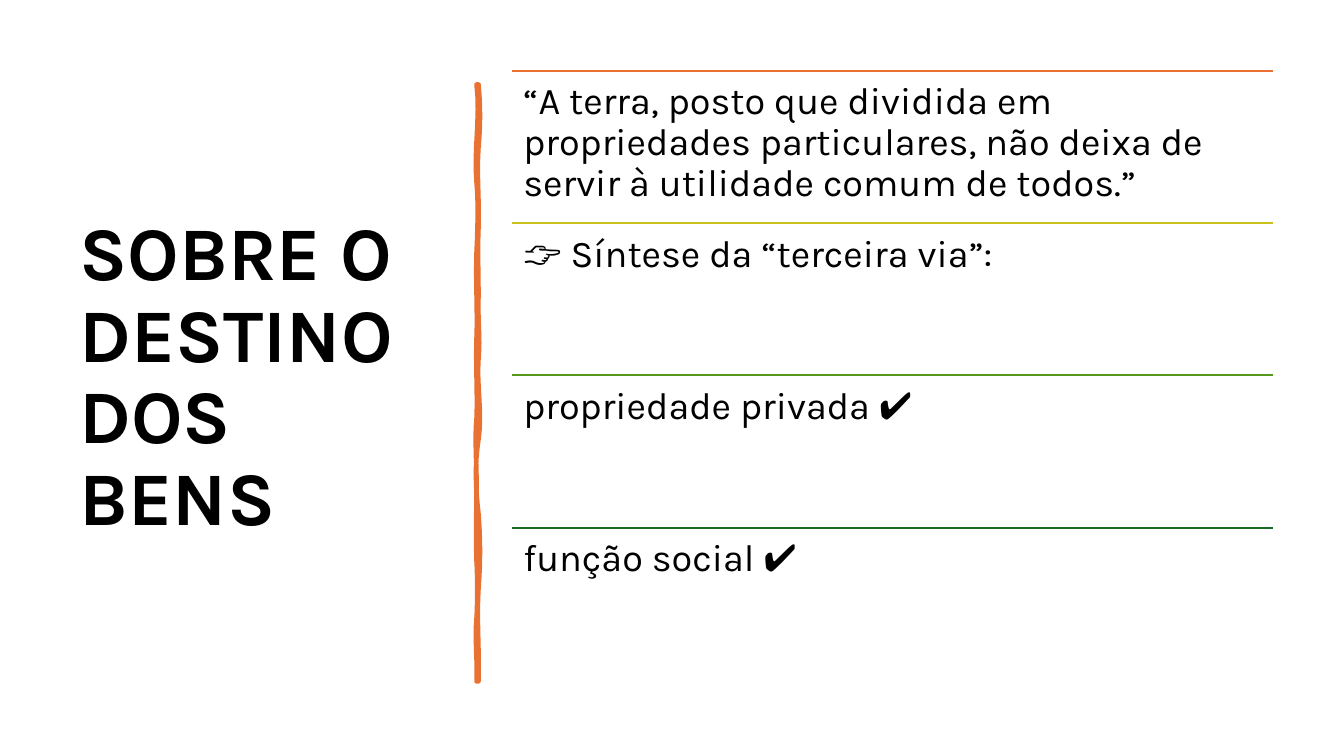
from lxml import etree
from pptx import Presentation
from pptx import util as u
from pptx.dml.color import RGBColor
from pptx.enum import shapes, text
from pptx.oxml.ns import qn

TITLE = dict(name="Karla", size=u.Pt(54), bold=True)
BODY = dict(name="Karla", size=u.Pt(27), bold=False)
LEFT, TOP, WIDE, STEP = 12.9, 1.78, 19.18, 3.84
ROWS = [
    ("E97132", "“A terra, posto que dividida em propriedades particulares, "
               "não deixa de servir à utilidade comum de todos.”"),
    ("CBC11E", "👉 Síntese da “terceira via”:"),
    ("56991D", "propriedade privada ✔️"),
    ("196B24", "função social ✔️"),
]
RIGHT_YS = [2.13, 3.71, 5.74, 7.47, 9.04, 11.07, 12.95, 14.83, 17.17]
RIGHT_BENDS = [(2, 2), (-2, 1), (-1, 0), (-1, 2), (-2, 4), (-4, -3), (2, 2), (-2, 1)]
LEFT_YS = [17.17, 15.57, 14.15, 12.12, 10.54, 8.51, 6.35, 4.6, 2.13]
LEFT_BENDS = [(1, -2), (1, 1), (-1, 0), (0, -2), (1, -1), (1, -1), (1, 2), (-3, 4)]


def paint(color, code):
    color.rgb = RGBColor.from_string(code)


def style(item, values):
    for key, value in values.items():
        setattr(item, key, value)


def write(shape, words, font, inset, anchor):
    frame = shape.text_frame
    style(frame, dict(word_wrap=True, auto_size=text.MSO_AUTO_SIZE.NONE,
                      vertical_anchor=anchor))
    if inset:
        style(frame, {"margin_" + side: u.Cm(inset)
                      for side in ("left", "top", "right", "bottom")})
    para = frame.paragraphs[0]
    para.text = words
    style(para, dict(line_spacing=0.9, alignment=text.PP_ALIGN.LEFT))
    style(para.font, font)
    paint(para.font.color, "000000")


def add_title(slide, words):
    title = slide.shapes.title
    style(title, dict(left=u.Cm(1.75), top=u.Cm(1.78),
                      width=u.Cm(9.5), height=u.Cm(15.52)))
    write(title, words, TITLE, None, text.MSO_ANCHOR.MIDDLE)


def add_row(slide, top, code, words):
    rule = slide.shapes.add_connector(
        shapes.MSO_CONNECTOR.STRAIGHT,
        u.Cm(LEFT), u.Cm(top), u.Cm(LEFT + WIDE), u.Cm(top))
    paint(rule.line.color, code)
    rule.line.width = u.Pt(1.5)
    etree.SubElement(rule._element.spPr, qn("a:effectLst"))
    box = slide.shapes.add_textbox(u.Cm(LEFT), u.Cm(top), u.Cm(WIDE), u.Cm(STEP))
    write(box, words, BODY, 0.29, text.MSO_ANCHOR.TOP)


def trace(base, knots, bends, count=8):
    points = [(u.Cm(base), u.Cm(knots[0]))]
    for start, end, (first, last) in zip(knots, knots[1:], bends):
        for n in range(1, count + 1):
            t = n / count
            sway = 3 * t * (1 - t) * ((1 - t) * first + t * last)
            points.append((u.Cm(base + 0.025 * sway),
                           u.Cm(start + t * (end - start))))
    return points


def add_stroke(slide, code):
    points = trace(12.06, RIGHT_YS, RIGHT_BENDS) + trace(12.01, LEFT_YS, LEFT_BENDS)
    pen = slide.shapes.build_freeform(*points[0], scale=1.0)
    pen.add_line_segments(points[1:], close=True)
    stroke = pen.convert_to_shape()
    stroke.shadow.inherit = False
    stroke.fill.solid()
    paint(stroke.fill.fore_color, code)
    paint(stroke.line.color, code)
    stroke.line.width = u.Pt(3.25)


def main():
    deck = Presentation()
    style(deck, dict(slide_width=u.Cm(33.87), slide_height=u.Cm(19.05)))
    slide = deck.slides.add_slide(deck.slide_layouts[5])
    add_title(slide, "SOBRE O DESTINO DOS BENS")
    add_stroke(slide, "E97132")
    for n, (code, words) in enumerate(ROWS):
        add_row(slide, TOP + n * STEP, code, words)
    deck.save("out.pptx")


if __name__ == "__main__":
    main()
